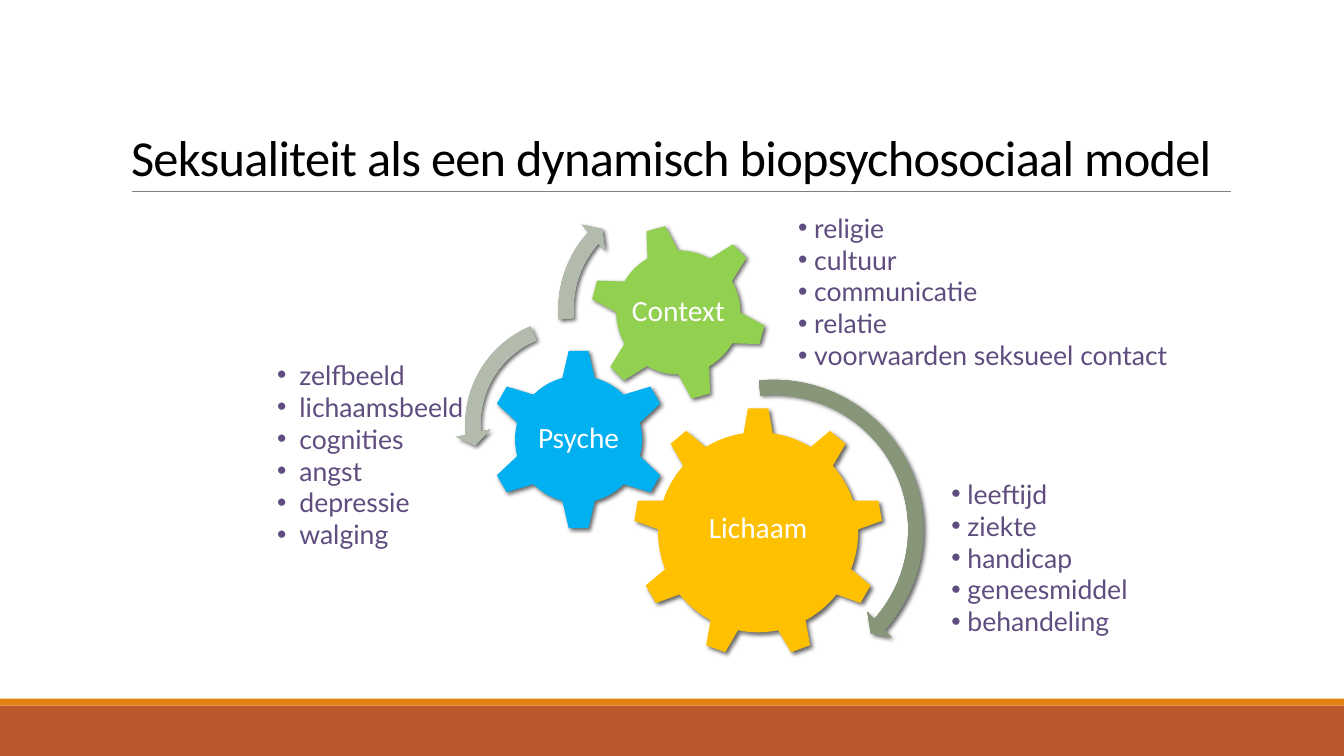
import pptx
import pptx.dml.color
import pptx.enum.shapes
import pptx.enum.text
import pptx.oxml
import pptx.oxml.ns
import pptx.util

Pt = pptx.util.Pt
SHAPES = pptx.enum.shapes.MSO_SHAPE
ALIGN = pptx.enum.text.PP_ALIGN
ANCHOR = pptx.enum.text.MSO_ANCHOR
NAMESPACE = pptx.oxml.ns.nsdecls("a")

COLORS = {
    "title": "000000",
    "label": "FFFFFF",
    "list": "5F4D7F",
    "rule": "808080",
    "footer": "BD582C",
    "stripe": "E48312",
    "body": "FFC000",
    "psyche": "00B0F0",
    "context": "92D050",
    "shadow": "000000",
}
DARK_GRADIENT = {0: "849276", 34: "859378", 70: "879579", 100: "8D9A81"}
LIGHT_GRADIENT = {0: "AFB6A8", 34: "B1B8AA", 70: "B3BBAC", 100: "BCC3B5"}


def rgb(name):
    return pptx.dml.color.RGBColor.from_string(COLORS[name])


def write_text(frame, lines, *, size, font, color, align=ALIGN.LEFT,
               anchor=ANCHOR.TOP, spacing=1.0, margins=(7.2, 3.6),
               wrap=True, tracking=None, bullet_indent=None):
    frame.word_wrap = wrap
    frame.auto_size = pptx.enum.text.MSO_AUTO_SIZE.NONE
    frame.vertical_anchor = anchor
    frame.margin_left = frame.margin_right = Pt(margins[0])
    frame.margin_top = frame.margin_bottom = Pt(margins[1])
    for index, line in enumerate(lines):
        paragraph = frame.add_paragraph() if index else frame.paragraphs[0]
        paragraph.alignment = align
        paragraph.line_spacing = spacing
        paragraph.space_before = paragraph.space_after = Pt(0)
        run = paragraph.add_run()
        run.text = line
        run.font.size = Pt(size)
        run.font.name = font
        run.font.color.rgb = rgb(color)
        if tracking is not None:
            run.font._element.set("spc", str(round(tracking * 100)))
        if bullet_indent is not None:
            properties = paragraph._p.get_or_add_pPr()
            properties.set("marL", str(Pt(bullet_indent)))
            properties.set("indent", str(-Pt(bullet_indent)))
            for tag in (f'<a:buFont {NAMESPACE} typeface="Arial"/>',
                        f'<a:buChar {NAMESPACE} char="•"/>'):
                properties.append(pptx.oxml.parse_xml(tag))


class SlideBuilder:
    heading_font = "Calibri"
    list_font = "Lato"

    def __init__(self, slide):
        self.slide = slide

    def title(self, text, left, top, width, height):
        title = self.slide.shapes.title
        title.left, title.top = Pt(left), Pt(top)
        title.width, title.height = Pt(width), Pt(height)
        write_text(title.text_frame, [text], size=36, font=self.heading_font,
                   color="title", anchor=ANCHOR.BOTTOM, spacing=0.85,
                   tracking=-0.5)

    def shape(self, kind, left, top, width, height, color):
        shape = self.slide.shapes.add_shape(
            kind, Pt(left), Pt(top), Pt(width), Pt(height))
        shape.fill.solid()
        shape.fill.fore_color.rgb = rgb(color)
        shape.line.fill.background()
        shape.shadow.inherit = False
        return shape

    def rule(self, left, right, top):
        line = self.slide.shapes.add_connector(
            pptx.enum.shapes.MSO_CONNECTOR.STRAIGHT,
            Pt(left), Pt(top), Pt(right), Pt(top))
        line.line.color.rgb = rgb("rule")
        line.line.width = Pt(0.5)
        line._element.spPr.append(
            pptx.oxml.parse_xml(f"<a:effectLst {NAMESPACE}/>"))

    def cast_shadow(self, shape):
        effects = shape._element.spPr.find(pptx.oxml.ns.qn("a:effectLst"))
        effects.append(pptx.oxml.parse_xml(
            f'<a:outerShdw {NAMESPACE} blurRad="{Pt(3)}" dist="{Pt(2)}" '
            f'dir="2700000" algn="ctr" rotWithShape="0">'
            f'<a:srgbClr val="{COLORS["shadow"]}"><a:alpha val="60000"/>'
            f'</a:srgbClr></a:outerShdw>'))

    def gear(self, kind, text, left, top, size, color, rotation=0, lift=0):
        gear = self.shape(kind, left, top, size, size, color)
        gear.rotation = rotation
        self.cast_shadow(gear)
        label_size = size / 2
        label = self.slide.shapes.add_textbox(
            Pt(left + size / 4), Pt(top + size / 4 - lift),
            Pt(label_size), Pt(label_size))
        write_text(label.text_frame, [text], size=21, font=self.heading_font,
                   color="label", align=ALIGN.CENTER, anchor=ANCHOR.MIDDLE,
                   spacing=0.9, margins=(2, 2), wrap=False)

    def curved_arrow(self, kind, left, top, size, adjustments, gradient):
        arrow = self.shape(kind, left, top, size, size, "rule")
        for index, value in enumerate(adjustments):
            arrow.adjustments[index] = value
        stops = "".join(
            f'<a:gs pos="{position * 1000}"><a:srgbClr val="{color}"/></a:gs>'
            for position, color in gradient.items())
        properties = arrow._element.spPr
        solid = properties.find(pptx.oxml.ns.qn("a:solidFill"))
        properties.replace(solid, pptx.oxml.parse_xml(
            f'<a:gradFill {NAMESPACE} rotWithShape="1"><a:gsLst>{stops}'
            f'</a:gsLst><a:path path="circle"><a:fillToRect l="100000" '
            f't="100000" r="100000" b="100000"/></a:path></a:gradFill>'))
        self.cast_shadow(arrow)

    def bullets(self, items, left, top, width, indent):
        height = 22.8 * len(items) + 7.2
        box = self.slide.shapes.add_textbox(
            Pt(left), Pt(top), Pt(width), Pt(height))
        write_text(box.text_frame, items, size=19, font=self.list_font,
                   color="list", bullet_indent=indent)


def main():
    presentation = pptx.Presentation()
    presentation.slide_width = Pt(960)
    presentation.slide_height = Pt(540)
    builder = SlideBuilder(
        presentation.slides.add_slide(presentation.slide_layouts[5]))

    builder.shape(SHAPES.RECTANGLE, 0, 504, 960, 36, "footer")
    builder.shape(SHAPES.RECTANGLE, 0, 499, 960, 5, "stripe")
    builder.rule(94.3, 879, 136.8)
    builder.title("Seksualiteit als een dynamisch biopsychosociaal model",
                  86.4, 22.3, 792, 114.5)

    builder.gear(SHAPES.GEAR_9, "Lichaam", 452.2, 290.9, 178.6, "body", lift=2)
    builder.gear(SHAPES.GEAR_6, "Psyche", 348.5, 249.1, 129.6, "psyche")
    builder.gear(SHAPES.GEAR_6, "Context", 421.2, 159.8, 126.7, "context",
                 rotation=345)

    builder.curved_arrow(SHAPES.CIRCULAR_ARROW, 438.5, 264.2, 228.2,
                         (0.047, 2.99, 25.14, 158.65, 0.055), DARK_GRADIENT)
    builder.curved_arrow(SHAPES.LEFT_CIRCULAR_ARROW, 325.4, 220.3, 165.6,
                         (0.065, 4.3, 104.89, 148.38, 0.075), LIGHT_GRADIENT)
    builder.curved_arrow(SHAPES.CIRCULAR_ARROW, 391.7, 131.8, 178.6,
                         (0.06, 3.94, 133.14, 105.08, 0.07), LIGHT_GRADIENT)

    builder.bullets(["religie", "cultuur", "communicatie", "relatie",
                     "voorwaarden seksueel contact"], 563, 147.6, 284, 11.5)
    builder.bullets(["leeftijd", "ziekte", "handicap", "geneesmiddel",
                     "behandeling"], 672.5, 337.7, 144, 11.5)
    builder.bullets(["zelfbeeld", "lichaamsbeeld", "cognities", "angst",
                     "depressie", "walging"], 190.8, 252.7, 152.6, 16)

    presentation.save("out.pptx")


if __name__ == "__main__":
    main()
